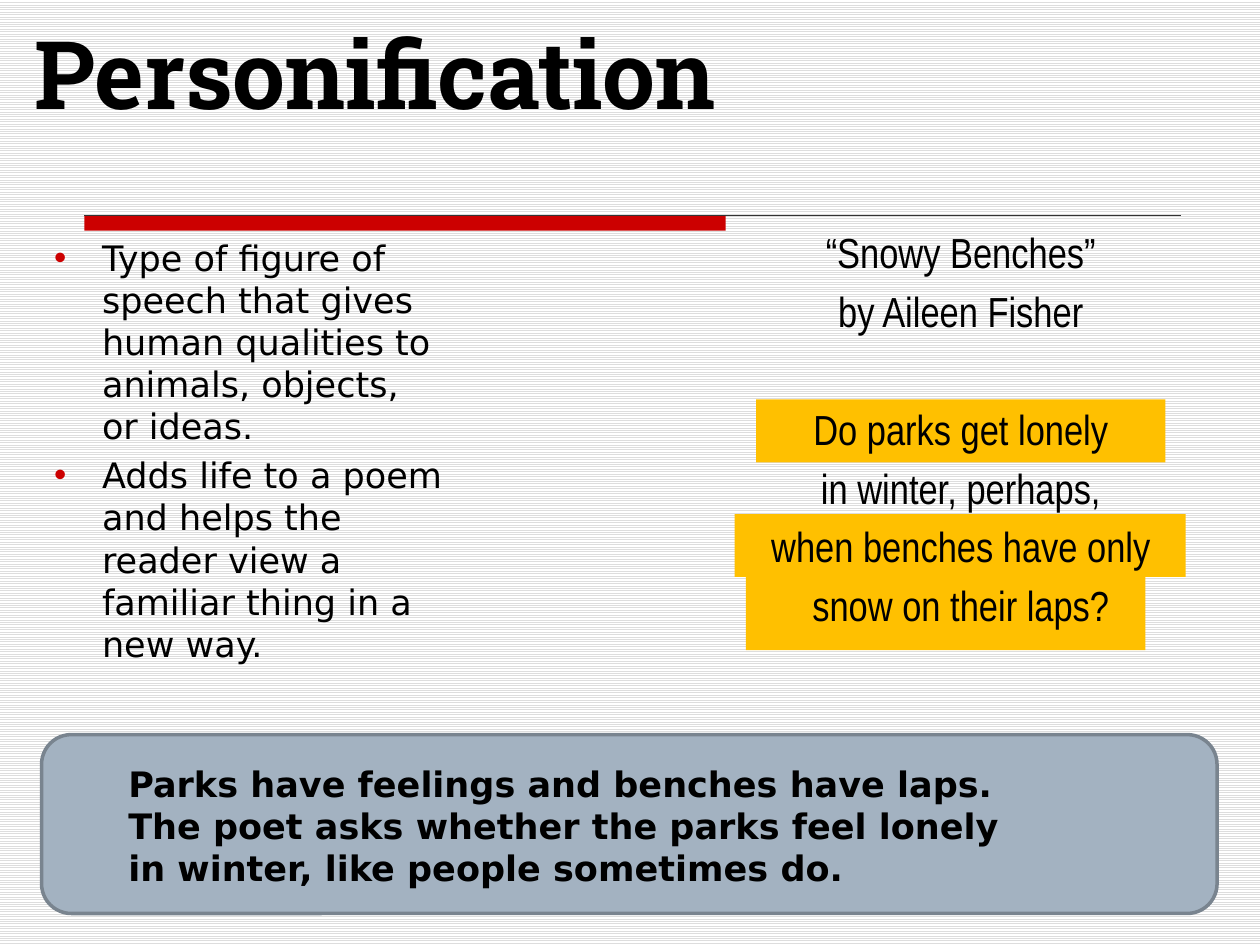
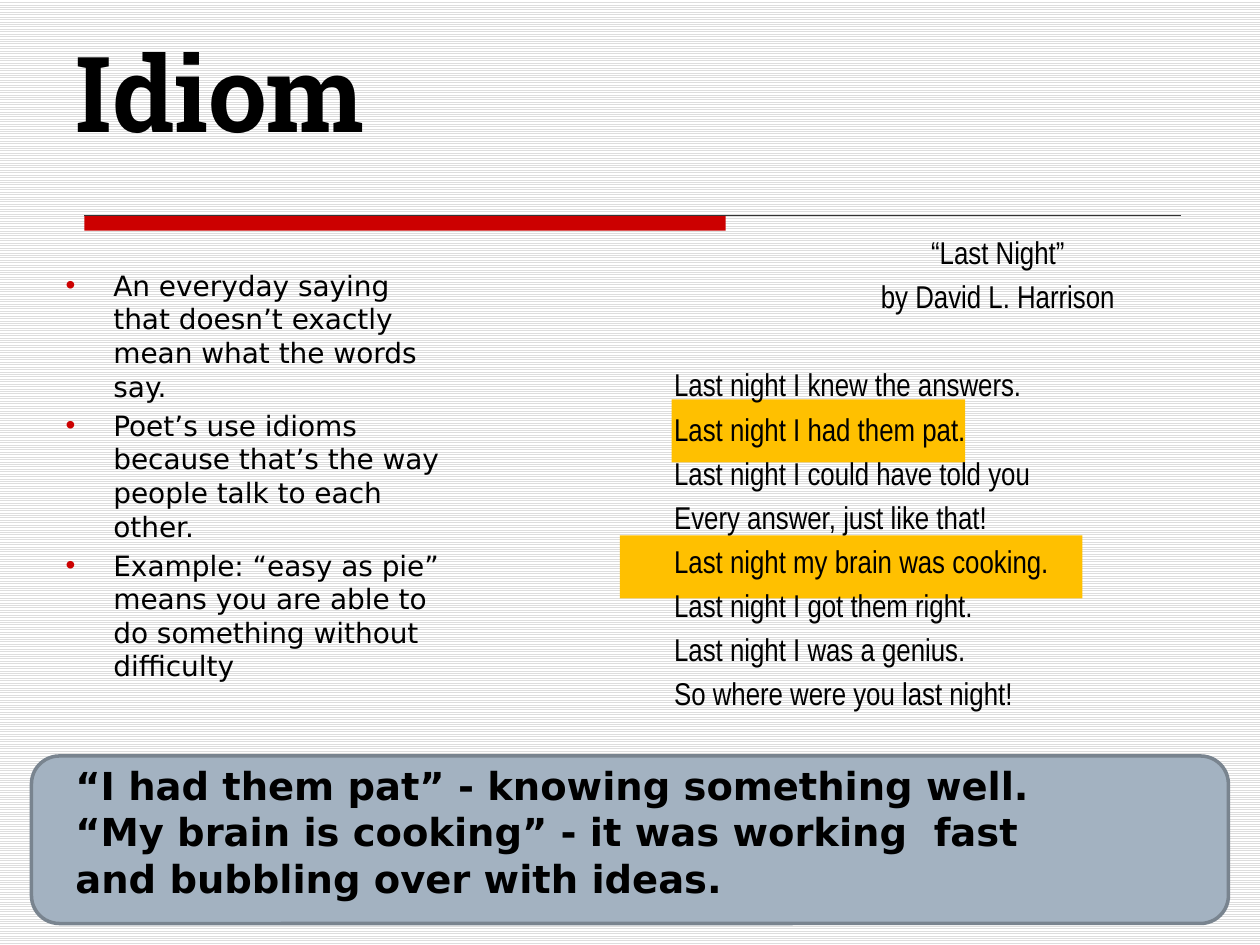
from lxml.etree import SubElement
from pptx import Presentation
from pptx.dml.color import RGBColor
from pptx.enum.dml import MSO_PATTERN
from pptx.enum.shapes import MSO_CONNECTOR, MSO_SHAPE
from pptx.enum.text import MSO_ANCHOR, MSO_AUTO_SIZE, PP_ALIGN
from pptx.oxml.ns import qn
from pptx.util import Inches, Pt

COLOURS = {
    "text": "000000", "red": "CC0000", "rule": "333333", "highlight": "FFC000",
    "panel": "A3B2C1", "panel_edge": "79848F", "stripe": "DDDDDD", "paper": "FFFFFF",
}
TITLE_FONT, BODY_FONT, POEM_FONT = "Roboto Slab", "DejaVu Sans", "Arial Narrow"
BULLET_INDENT = 0.38
TWO_CONTENT_LAYOUT = 3

TERMS = [
    {
        "title": ("Personification", 54, (0.17, 0.25, 9.25, 0.82)),
        "points": (
            [
                "Type of figure of speech that gives human qualities to animals, objects, or ideas.",
                "Adds life to a poem and helps the reader view a familiar thing in a new way.",
            ],
            20, (0.33, 1.83, 3.29, 3.67),
        ),
        "heading": ["“Snowy Benches”", "by Aileen Fisher"],
        "verse": [
            "Do parks get lonely",
            "in winter, perhaps,",
            "when benches have only",
            "snow on their laps?",
        ],
        "poem_style": (24, PP_ALIGN.CENTER, (5.5, 1.75, 4.25, 4.12)),
        "highlights": [
            (5.92, 4.58, 3.17, 0.58), (5.83, 4.08, 3.58, 0.5), (6, 3.17, 3.25, 0.5),
        ],
        "panel": (0.33, 5.83, 9.33, 1.42),
        "meaning": (
            [
                "Parks have feelings and benches have laps.",
                "The poet asks whether the parks feel lonely",
                "in winter, like people sometimes do.",
            ],
            20, (0.92, 6, 8.33, 1.11),
        ),
    },
    {
        "title": ("Idiom", 60, (0.5, 0, 3.29, 1.27)),
        "points": (
            [
                "An everyday saying that doesn’t exactly mean what the words say.",
                "Poet’s use idioms because that’s the way people talk to each other.",
                "Example: “easy as pie” means you are able to do something without difficulty",
            ],
            16, (0.42, 2.08, 3.29, 4.58),
        ),
        "heading": ["“Last Night”", "by David L. Harrison"],
        "verse": [
            "Last night I knew the answers.",
            "Last night I had them pat.",
            "Last night I could have told you",
            "Every answer, just like that!",
            "Last night my brain was cooking.",
            "Last night I got them right.",
            "Last night I was a genius.",
            "So where were you last night!",
        ],
        "poem_style": (18, PP_ALIGN.LEFT, (5.25, 1.8, 5.34, 5.7)),
        "highlights": [(4.92, 4.25, 3.67, 0.5), (5.33, 3.17, 2.33, 0.5)],
        "panel": (0.25, 6, 9.5, 1.33),
        "meaning": (
            [
                "“I had them pat” - knowing something well.",
                "“My brain is cooking” - it was working  fast",
                "and bubbling over with ideas.",
            ],
            22, (0.5, 6, 9, 1.21),
        ),
    },
]


def colour(name):
    """Return the named colour."""
    return RGBColor.from_string(COLOURS[name])


def place(shape, box):
    """Move and size a shape to a box in inches."""
    shape.left, shape.top, shape.width, shape.height = map(Inches, box)


def add_block(page, kind, box, fill, edge=None):
    """Add a flat filled shape, outlined if an edge colour is given."""
    block = page.shapes.add_shape(kind, *map(Inches, box))
    block.shadow.inherit = False
    block.fill.solid()
    block.fill.fore_color.rgb = colour(fill)
    if edge:
        block.line.color.rgb = colour(edge)
        block.line.width = Pt(2)
    else:
        block.line.fill.background()
    return block


def write(shape, lines, font, size, bold=False, align=PP_ALIGN.LEFT):
    """Fill a shape with one paragraph per line and return the paragraphs."""
    frame = shape.text_frame
    frame.word_wrap = True
    frame.auto_size = MSO_AUTO_SIZE.NONE
    frame.text = "\n".join(lines)
    for para in frame.paragraphs:
        para.alignment = align
        para.font.name = font
        para.font.size = Pt(size)
        para.font.bold = bold
        para.font.color.rgb = colour("text")
    return frame.paragraphs


def set_bullet(para, indent=0):
    """Give a paragraph a red hanging bullet, or none without an indent."""
    properties = para._p.get_or_add_pPr()
    properties.set("marL", str(Inches(indent)))
    properties.set("indent", str(-Inches(indent)))
    marks = []
    if indent:
        bullet_colour = properties.makeelement(qn("a:buClr"))
        SubElement(bullet_colour, qn("a:srgbClr"), val=COLOURS["red"])
        marks = [
            bullet_colour,
            properties.makeelement(qn("a:buFont"), typeface="Arial"),
            properties.makeelement(qn("a:buChar"), char="•"),
        ]
    else:
        marks = [properties.makeelement(qn("a:buNone"))]
    defaults = properties.find(qn("a:defRPr"))
    for mark in marks:
        defaults.addprevious(mark)


def add_title_rule(page, left=0.67, top=1.71, width=8.7):
    """Draw the red bar and the thin line under the title."""
    add_block(page, MSO_SHAPE.RECTANGLE, (left, top, 5.09, 0.12), "red")
    ends = map(Inches, (left, top, left + width, top))
    rule = page.shapes.add_connector(MSO_CONNECTOR.STRAIGHT, *ends)
    rule.line.color.rgb = colour("rule")
    rule.line.width = Pt(0.75)
    SubElement(rule.element.spPr, qn("a:effectLst"))


def fill_title(title, text, size, box):
    """Place the title, standing on the bottom of its box."""
    place(title, box)
    write(title, [text], TITLE_FONT, size, bold=True)
    title.text_frame.vertical_anchor = MSO_ANCHOR.BOTTOM


def fill_points(body, points, size, box):
    """Place the bulleted definition."""
    place(body, box)
    for para in write(body, points, BODY_FONT, size):
        para.space_before = Pt(0.2 * size)
        set_bullet(para, BULLET_INDENT)


def fill_poem(body, heading, verse, size, align, box):
    """Place the poem, its verse one line below the centred heading."""
    place(body, box)
    paras = write(body, heading + verse, POEM_FONT, size, align=align)
    for para in paras:
        para.space_before = Pt(0.2 * size)
        set_bullet(para)
    for para in paras[:len(heading)]:
        para.alignment = PP_ALIGN.CENTER
    paras[len(heading)].space_before = Pt(1.6 * size)


def add_meaning(page, lines, size, box):
    """Add the bold explanation over the panel."""
    write(page.shapes.add_textbox(*map(Inches, box)), lines, BODY_FONT, size, bold=True)


def add_term_slide(deck, term):
    """Build one slide that defines a term and shows it in a poem."""
    page = deck.slides.add_slide(deck.slide_layouts[TWO_CONTENT_LAYOUT])
    title, points, poem = page.placeholders
    add_title_rule(page)
    for box in term["highlights"]:
        add_block(page, MSO_SHAPE.RECTANGLE, box, "highlight")
    add_block(page, MSO_SHAPE.ROUNDED_RECTANGLE, term["panel"], "panel", "panel_edge")
    for placeholder in (title, points, poem):
        page.shapes.element.append(placeholder.element)
    fill_title(title, *term["title"])
    fill_points(points, *term["points"])
    fill_poem(poem, term["heading"], term["verse"], *term["poem_style"])
    add_meaning(page, *term["meaning"])


def set_striped_background(deck):
    """Give every slide the striped paper of the master."""
    fill = deck.slide_master.background.fill
    fill.patterned()
    fill.pattern = MSO_PATTERN.LIGHT_HORIZONTAL
    fill.fore_color.rgb = colour("stripe")
    fill.back_color.rgb = colour("paper")


def main():
    """Build and save the deck."""
    deck = Presentation()
    deck.slide_width, deck.slide_height = Inches(10), Inches(7.5)
    set_striped_background(deck)
    for term in TERMS:
        add_term_slide(deck, term)
    deck.save("out.pptx")


if __name__ == "__main__":
    main()
